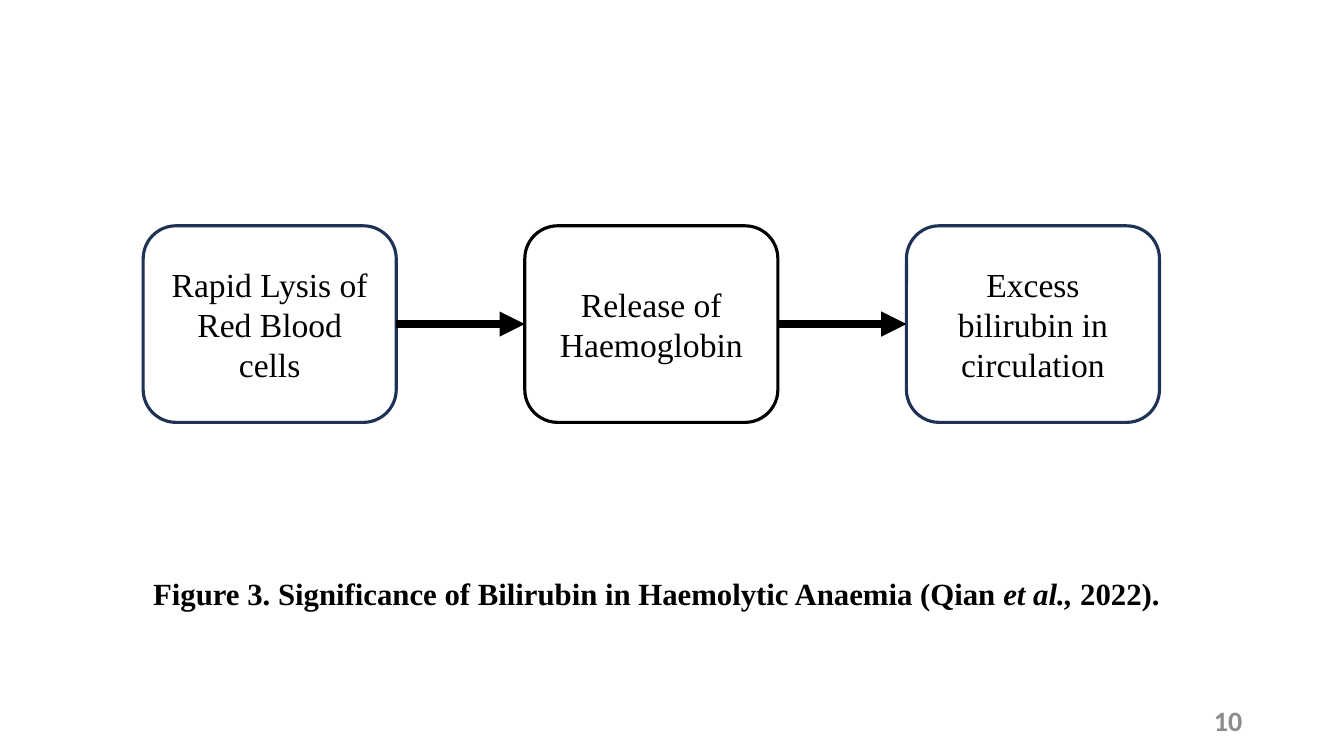
from dataclasses import dataclass
from itertools import pairwise

from lxml.etree import SubElement
from pptx import Presentation
from pptx.dml.color import RGBColor
from pptx.enum.shapes import MSO_CONNECTOR, MSO_SHAPE
from pptx.enum.text import MSO_ANCHOR, PP_ALIGN
from pptx.oxml.ns import qn
from pptx.util import Inches, Pt


@dataclass(frozen=True)
class Theme:
    black: RGBColor = RGBColor(0x00, 0x00, 0x00)
    white: RGBColor = RGBColor(0xFF, 0xFF, 0xFF)
    navy: RGBColor = RGBColor(0x1E, 0x32, 0x56)
    grey: RGBColor = RGBColor(0x8C, 0x8C, 0x8C)
    serif: str = "Times New Roman"
    sans: str = "Calibri"
    step_size: Pt = Pt(24)
    caption_size: Pt = Pt(22)
    number_size: Pt = Pt(20)
    outline: Pt = Pt(2.25)
    arrow: Pt = Pt(6)


THEME = Theme()

STEPS = [
    ("Rapid Lysis of Red Blood cells", THEME.navy),
    ("Release of Haemoglobin", THEME.black),
    ("Excess bilirubin in circulation", THEME.navy),
]
CAPTION = [
    ("Figure 3. Significance of Bilirubin in Haemolytic Anaemia (Qian ", False),
    ("et al., ", True),
    ("2022).", False),
]


def style_font(para, name, size, color, bold=False):
    para.font.name = name
    para.font.size = size
    para.font.color.rgb = color
    para.font.bold = bold


def add_step(page, text, outline, left, top, width, height):
    step = page.shapes.add_shape(
        MSO_SHAPE.ROUNDED_RECTANGLE, left, top, width, height)
    step.shadow.inherit = False
    step.fill.solid()
    step.fill.fore_color.rgb = THEME.white
    step.line.color.rgb = outline
    step.line.width = THEME.outline
    step.text_frame.word_wrap = True
    step.text_frame.vertical_anchor = MSO_ANCHOR.MIDDLE
    para = step.text_frame.paragraphs[0]
    para.text = text
    para.alignment = PP_ALIGN.CENTER
    style_font(para, THEME.serif, THEME.step_size, THEME.black)
    return step


def add_arrow(page, source, target):
    arrow = page.shapes.add_connector(MSO_CONNECTOR.STRAIGHT, 0, 0, 0, 0)
    arrow.begin_connect(source, 3)
    arrow.end_connect(target, 1)
    arrow.line.color.rgb = THEME.black
    arrow.line.width = THEME.arrow
    SubElement(arrow.line._get_or_add_ln(), qn("a:tailEnd"), type="triangle")
    SubElement(arrow._element.spPr, qn("a:effectLst"))


def add_flow(page, left, top, width, height):
    """Spread the steps evenly across the box and link neighbours."""
    step_width = Inches(2.51)
    pitch = (width - step_width) // (len(STEPS) - 1)
    steps = [
        add_step(page, text, outline, left + i * pitch, top, step_width, height)
        for i, (text, outline) in enumerate(STEPS)
    ]
    for source, target in pairwise(steps):
        add_arrow(page, source, target)


def add_caption(page, left, top, width, height):
    box = page.shapes.add_textbox(left, top, width, height)
    box.text_frame.word_wrap = True
    para = box.text_frame.paragraphs[0]
    style_font(para, THEME.serif, THEME.caption_size, THEME.black, bold=True)
    for text, italic in CAPTION:
        span = para.add_run()
        span.text = text
        span.font.italic = italic


def add_page_number(page, left, top, width, height):
    box = page.shapes.add_textbox(left, top, width, height)
    box.text_frame.word_wrap = True
    box.text_frame.vertical_anchor = MSO_ANCHOR.MIDDLE
    para = box.text_frame.paragraphs[0]
    para.text = "10"
    para.alignment = PP_ALIGN.RIGHT
    style_font(para, THEME.sans, THEME.number_size, THEME.grey, bold=True)


def main():
    deck = Presentation()
    deck.slide_width = Inches(13.33)
    deck.slide_height = Inches(7.5)
    page = deck.slides.add_slide(deck.slide_layouts[6])  # blank layout

    # Caption and page number
    add_caption(page, Inches(1.42), Inches(5.65), Inches(10.49), Inches(0.47))
    add_page_number(page, Inches(9.42), Inches(6.95), Inches(3), Inches(0.4))

    # Flow of three steps
    add_flow(page, Inches(1.42), Inches(2.24), Inches(10.08), Inches(1.95))

    deck.save("out.pptx")


if __name__ == "__main__":
    main()
